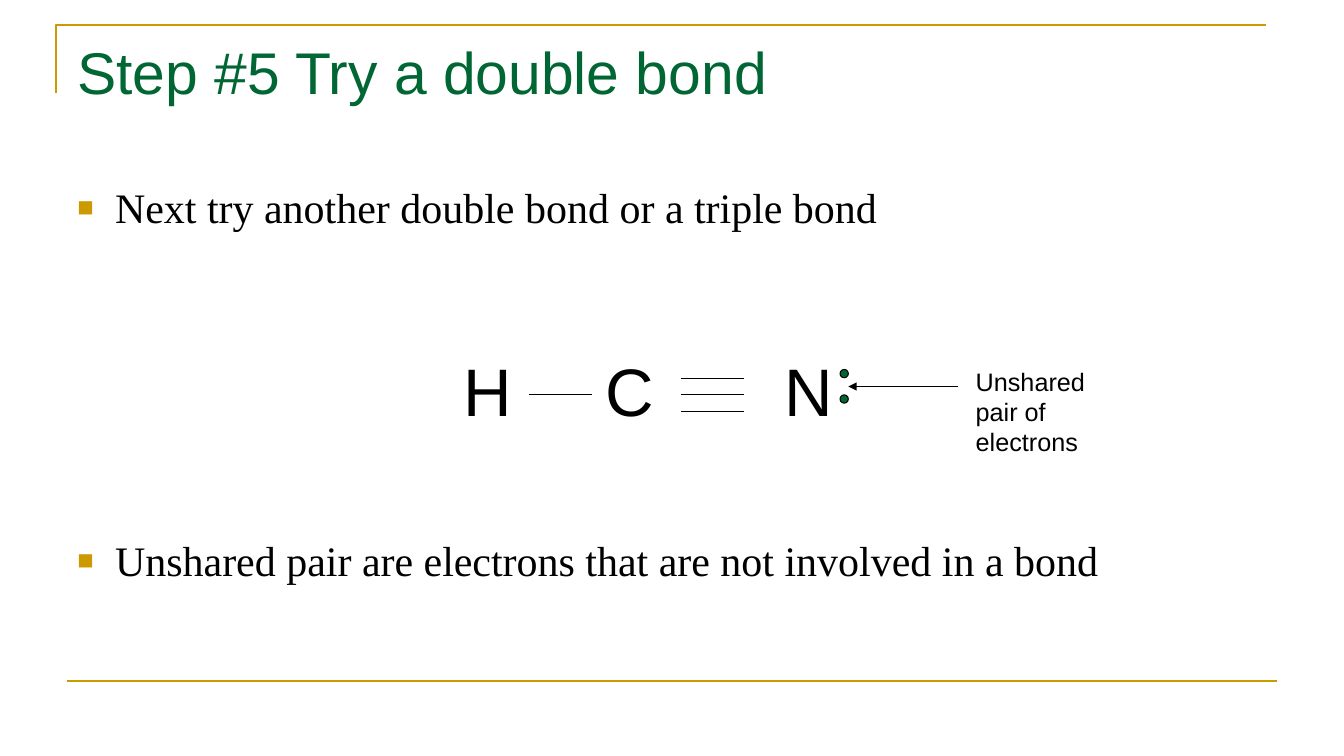
from lxml.etree import SubElement
from pptx import Presentation
from pptx.dml.color import RGBColor
from pptx.enum.shapes import MSO_CONNECTOR, MSO_SHAPE
from pptx.oxml.ns import qn
from pptx.util import Cm, Pt

COLOURS = {"green": "006633", "gold": "CC9900", "black": "000000"}
INSET = (0.25, 0.13)


def colour(name):
    """Return the named colour."""
    return RGBColor.from_string(COLOURS[name])


def add_text(slide, left, top, width, height, texts, size, font="Arial", ink="black"):
    """Add a text box with one paragraph per text and return its paragraphs."""
    frame = slide.shapes.add_textbox(Cm(left), Cm(top), Cm(width), Cm(height)).text_frame
    frame.word_wrap = True
    frame.margin_left = frame.margin_right = Cm(INSET[0])
    frame.margin_top = frame.margin_bottom = Cm(INSET[1])
    for index, text in enumerate(texts):
        paragraph = frame.add_paragraph() if index else frame.paragraphs[0]
        run = paragraph.add_run()
        run.text = text
        run.font.size = Pt(size)
        run.font.name = font
        run.font.color.rgb = colour(ink)
    return frame.paragraphs


def add_bullet(paragraph):
    """Give a paragraph a hanging gold square bullet."""
    properties = paragraph._p.get_or_add_pPr()
    properties.set("marL", str(Cm(0.95)))
    properties.set("indent", str(-Cm(0.95)))
    bullet_colour = SubElement(properties, qn("a:buClr"))
    SubElement(bullet_colour, qn("a:srgbClr"), val=COLOURS["gold"])
    SubElement(properties, qn("a:buSzPct"), val="65000")
    SubElement(properties, qn("a:buFont"), typeface="Arial")
    SubElement(properties, qn("a:buChar"), char="■")


def add_line(slide, left, right, y, weight, ink="black", arrow=False):
    """Add a horizontal line, with an optional arrowhead at its left end."""
    connector = slide.shapes.add_connector(
        MSO_CONNECTOR.STRAIGHT, Cm(left), Cm(y), Cm(right), Cm(y))
    connector.line.width = Pt(weight)
    connector.line.color.rgb = colour(ink)
    if arrow:
        SubElement(connector.line._get_or_add_ln(), qn("a:headEnd"), type="triangle")
    SubElement(connector._element.spPr, qn("a:effectLst"))


def add_corner(slide):
    """Add the gold corner rule around the title."""
    builder = slide.shapes.build_freeform(Cm(1.42), Cm(2.34))
    builder.add_line_segments([(Cm(1.42), Cm(0.64)), (Cm(31.9), Cm(0.64))], close=False)
    corner = builder.convert_to_shape()
    corner.shadow.inherit = False
    corner.fill.background()
    corner.line.color.rgb = colour("gold")
    corner.line.width = Pt(1.5)


def add_electron(slide, left, top):
    """Add one electron dot."""
    dot = slide.shapes.add_shape(MSO_SHAPE.OVAL, Cm(left), Cm(top), Cm(0.21), Cm(0.21))
    dot.shadow.inherit = False
    dot.fill.solid()
    dot.fill.fore_color.rgb = colour("green")
    dot.line.color.rgb = colour("black")
    dot.line.width = Pt(0.75)


def add_molecule(slide):
    """Add hydrogen cyanide with its bonds and unshared pair."""
    for atom, left in (("H", 11.43), ("C", 15.01), ("N", 19.52)):
        add_text(slide, left, 8.68, 1.8, 2.29, [atom], 48)
    bond_y, bond_length = 9.95, 1.59
    add_line(slide, 13.34, 13.34 + bond_length, bond_y, 0.5)
    for step in (-1, 0, 1):
        add_line(slide, 17.17, 17.17 + bond_length, bond_y + step * 0.42, 0.5)
    for top in (9.31, 9.95):
        add_electron(slide, 21.17, top)
    add_line(slide, 21.38, 24.13, 9.74, 0.75, arrow=True)
    add_text(slide, 24.34, 9.1, 3.39, 2.54, ["Unshared pair of electrons"], 18)


def main():
    """Build and save the slide."""
    presentation = Presentation()
    presentation.slide_width, presentation.slide_height = Cm(33.87), Cm(19.05)
    slide = presentation.slides.add_slide(presentation.slide_layouts[6])
    add_corner(slide)
    add_line(slide, 1.7, 32.18, 17.15, 1.5, "gold")
    add_text(slide, 1.7, 0.76, 30.48, 3.18, ["Step #5 Try a double bond"], 42, ink="green")
    statements = add_text(
        slide, 1.7, 4.45, 30.48, 12.57,
        ["Next try another double bond or a triple bond",
         "Unshared pair are electrons that are not involved in a bond"],
        30, "Times New Roman")
    statements[1].space_before = Pt(216)
    for paragraph in statements:
        add_bullet(paragraph)
    add_molecule(slide)
    presentation.save("out.pptx")


if __name__ == "__main__":
    main()
